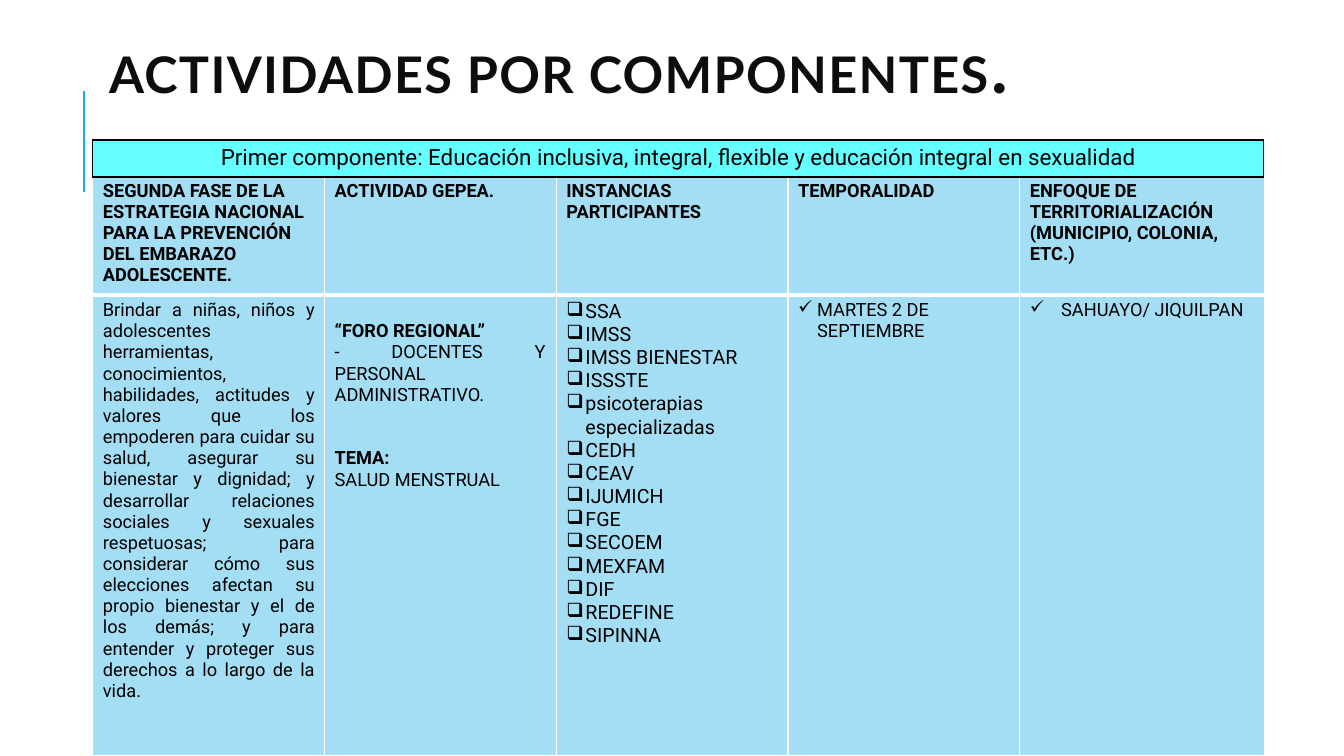
from lxml import etree
from pptx import Presentation
from pptx.dml.color import RGBColor
from pptx.enum.shapes import MSO_CONNECTOR
from pptx.enum.text import MSO_ANCHOR, PP_ALIGN as Align
from pptx.oxml import parse_xml
from pptx.oxml.ns import nsdecls, qn
from pptx.util import Cm, Pt


def color(code):
    return RGBColor.from_string(code)


def style_cell(cell, fill, line, top=1, bottom=1):
    """Fill a cell and draw its four borders, widths in points."""
    properties = cell._tc.get_or_add_tcPr()
    for tag, width in (("lnL", 1), ("lnR", 1), ("lnT", top), ("lnB", bottom)):
        properties.append(parse_xml(
            f'<a:{tag} {nsdecls("a")} w="{Pt(width)}"><a:solidFill>'
            f'<a:srgbClr val="{line}"/></a:solidFill></a:{tag}>'))
    cell.fill.solid()
    cell.fill.fore_color.rgb = color(fill)


HEADERS = [
    "SEGUNDA FASE DE LA ESTRATEGIA NACIONAL PARA LA PREVENCIÓN DEL EMBARAZO ADOLESCENTE.",
    "ACTIVIDAD GEPEA.",
    "INSTANCIAS PARTICIPANTES",
    "TEMPORALIDAD",
    "ENFOQUE DE TERRITORIALIZACIÓN (MUNICIPIO, COLONIA, ETC.)",
]
PURPOSE = (
    "Brindar a niñas, niños y adolescentes herramientas, conocimientos, habilidades, "
    "actitudes y valores que los empoderen para cuidar su salud, asegurar su bienestar "
    "y dignidad; y desarrollar relaciones sociales y sexuales respetuosas; para "
    "considerar cómo sus elecciones afectan su propio bienestar y el de los demás; y "
    "para entender y proteger sus derechos a lo largo de la vida."
)
INSTITUTIONS = [
    "SSA", "IMSS", "IMSS BIENESTAR", "ISSSTE", "psicoterapias especializadas", "CEDH",
    "CEAV", "IJUMICH", "FGE", "SECOEM", "MEXFAM", "DIF", "REDEFINE", "SIPINNA",
]
ACTIVITY = [
    "“FORO REGIONAL”",
    "- DOCENTES Y PERSONAL ADMINISTRATIVO.",
    "TEMA:",
    "SALUD MENSTRUAL",
]
BOLD_LINES = HEADERS + ["“FORO REGIONAL”", "TEMA:"]
# Each column: lines, alignment, size, bullet, hanging indent in cm
BODY = [
    ([PURPOSE], Align.JUSTIFY, 13, None, 0),
    (ACTIVITY, Align.JUSTIFY, 13, None, 0),
    (INSTITUTIONS, Align.JUSTIFY, 14, "❑", 0.48),
    (["MARTES 2 DE SEPTIEMBRE"], Align.LEFT, 13, "✓", 0.48),
    (["SAHUAYO/ JIQUILPAN"], Align.LEFT, 13, "✓", 0.79),
]
HEADER_ROW = [([text], Align.LEFT, 13, None, 0) for text in HEADERS]
BANNER = [(["Primer componente: Educación inclusiva, integral, flexible y educación "
            "integral en sexualidad"], Align.CENTER, 16, None, 0)]

presentation = Presentation()
presentation.slide_width, presentation.slide_height = Cm(33.87), Cm(19.05)
slide = presentation.slides.add_slide(presentation.slide_layouts[6])

accent = slide.shapes.add_connector(
    MSO_CONNECTOR.STRAIGHT, Cm(2.12), Cm(4.83), Cm(2.12), Cm(2.3))
accent.line.color.rgb = color("1CADE4")
accent.line.width = Pt(1.5)
etree.SubElement(accent._element.spPr, qn("a:effectLst"))

title = slide.shapes.add_textbox(Cm(2.5), 0, Cm(29.2), Cm(3.68))
title.text_frame.word_wrap = True
title.text_frame.vertical_anchor = MSO_ANCHOR.MIDDLE
paragraph = title.text_frame.paragraphs[0]
paragraph.line_spacing = 0.8
for text, size in (("ACTIVIDADES POR COMPONENTES", 36), (".", 50)):
    run = paragraph.add_run()
    run.text = text
    run.font.name, run.font.size, run.font.bold = "Lato", Pt(size), True
    run.font.color.rgb = color("0D0D0D")
    run.font._element.set("spc", "100")

activities = slide.shapes.add_table(
    2, 5, Cm(2.34), Cm(4.42), Cm(29.54), Cm(14.5)).table
for column, width in zip(activities.columns, (5.84, 5.84, 5.84, 5.84, 6.17)):
    column.width = Cm(width)
activities.rows[0].height, activities.rows[1].height = Cm(2.9), Cm(11.6)
banner = slide.shapes.add_table(1, 1, Cm(2.34), Cm(3.53), Cm(29.51), Cm(0.93)).table

for cell in activities.rows[0].cells:
    style_cell(cell, "A4DEF4", "FFFFFF", bottom=3)
for cell in activities.rows[1].cells:
    style_cell(cell, "A4DEF4", "FFFFFF", top=3)
style_cell(banner.cell(0, 0), "66FFFF", "000000")

for row, contents in ((activities.rows[0], HEADER_ROW), (activities.rows[1], BODY),
                      (banner.rows[0], BANNER)):
    for cell, (lines, alignment, size, bullet, indent) in zip(row.cells, contents):
        for index, text in enumerate(lines):
            frame = cell.text_frame
            paragraph = frame.add_paragraph() if index else frame.paragraphs[0]
            paragraph.alignment = alignment
            if bullet:
                properties = paragraph._p.get_or_add_pPr()
                properties.set("marL", str(Cm(indent)))
                properties.set("indent", str(-Cm(indent)))
                etree.SubElement(properties, qn("a:buChar")).set("char", bullet)
            if text == "TEMA:":
                paragraph.space_before = Pt(30.4)
            run = paragraph.add_run()
            run.text = text
            run.font.name, run.font.size = "Roboto", Pt(size)
            run.font.bold = text in BOLD_LINES
            run.font.color.rgb = color("000000")

activity_cell = activities.cell(1, 1)
activity_cell.margin_top = Cm(0.66)
activity_cell.margin_right = Cm(0.28)

presentation.save("out.pptx")
